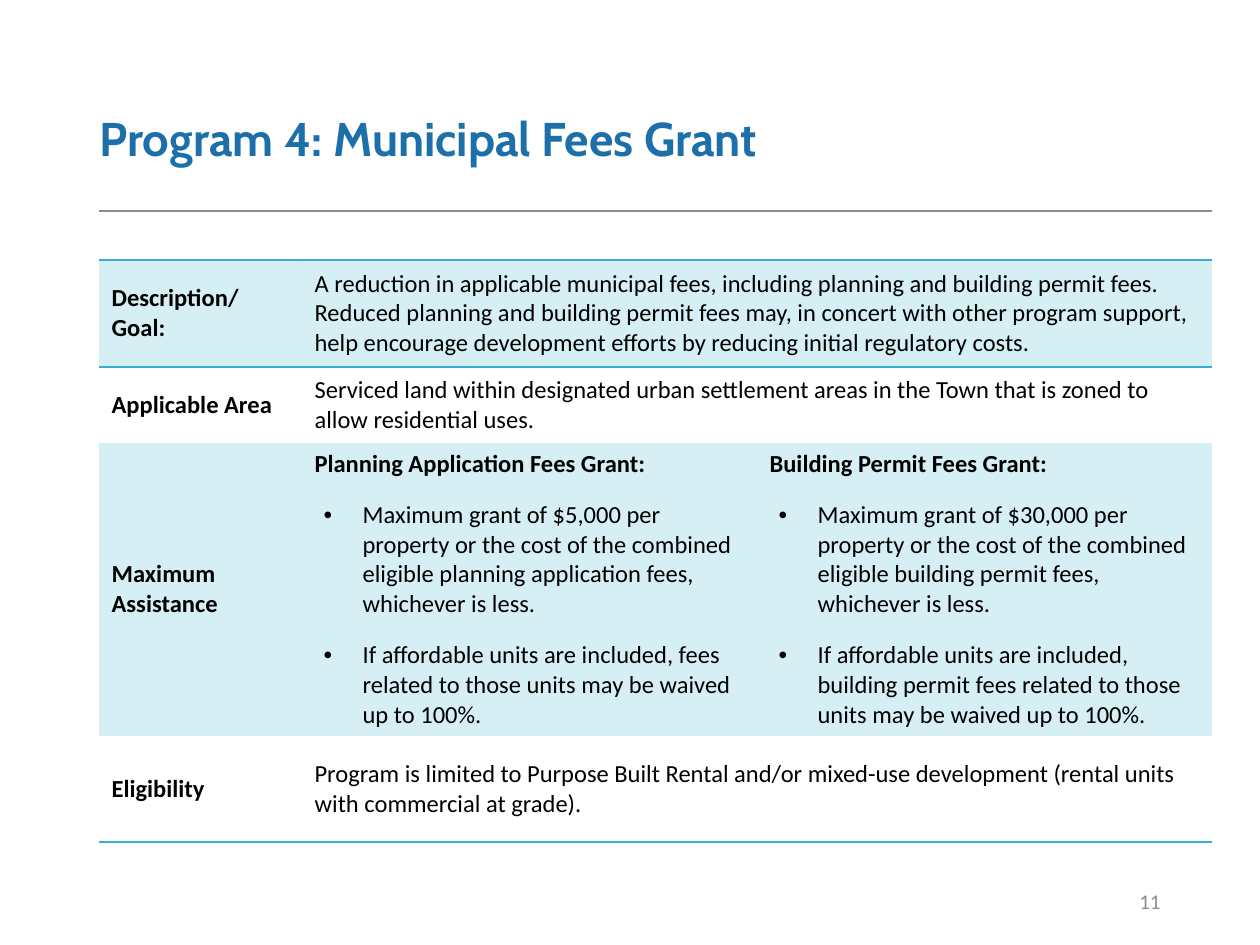
import pptx
import pptx.util
import pptx.dml.color
import pptx.enum.text
import pptx.oxml.ns
from lxml import etree

PX = 914400 // 126
TITLE_BLUE = pptx.dml.color.RGBColor(0x1D, 0x6F, 0xA9)
TEAL = pptx.dml.color.RGBColor(0x36, 0xAF, 0xCE)
RULE_GREY = pptx.dml.color.RGBColor(0x8C, 0x8C, 0x8C)
BLACK = pptx.dml.color.RGBColor(0, 0, 0)
NO_STYLE = "{2D5ABB26-0587-4C30-8999-92F81FD0307C}"
MIDDLE = pptx.enum.text.MSO_ANCHOR.MIDDLE
qn = pptx.oxml.ns.qn


def add_run(paragraph, text, size, color, bold=False, font="Calibri"):
    run = paragraph.add_run()
    run.text = text
    run.font.name = font
    run.font.size = pptx.util.Pt(size)
    run.font.bold = bold
    run.font.color.rgb = color


def add_border(cell, side, color, width):
    """Draw one side of a cell: lnT for top, lnB for bottom."""
    line = etree.SubElement(cell._tc.get_or_add_tcPr(), qn("a:" + side),
                            w=str(pptx.util.Pt(width)))
    fill = etree.SubElement(line, qn("a:solidFill"))
    etree.SubElement(fill, qn("a:srgbClr"), val=str(color))


prs = pptx.Presentation()
prs.slide_width = pptx.util.Inches(10)
prs.slide_height = pptx.util.Inches(7.5)
slide = prs.slides.add_slide(prs.slide_layouts[6])

# Title
title = slide.shapes.add_textbox(87 * PX, 50 * PX, 1086 * PX, 183 * PX).text_frame
title.word_wrap = True
title.vertical_anchor = MIDDLE
title.paragraphs[0].line_spacing = 0.9
add_run(title.paragraphs[0], "Program 4: Municipal Fees Grant", 27, TITLE_BLUE, True, "Cabin")

# Program table: a label, then one merged text or a list of (heading, bullets)
program = [
    ("Description/ Goal:",
     "A reduction in applicable municipal fees, including planning and building permit fees. "
     "Reduced planning and building permit fees may, in concert with other program support, "
     "help encourage development efforts by reducing initial regulatory costs."),
    ("Applicable Area",
     "Serviced land within designated urban settlement areas in the Town that is zoned to "
     "allow residential uses."),
    ("Maximum Assistance", [
        ("Planning Application Fees Grant:", [
            "Maximum grant of $5,000 per property or the cost of the combined eligible "
            "planning application fees, whichever is less.",
            "If affordable units are included, fees related to those units may be waived "
            "up to 100%."]),
        ("Building Permit Fees Grant:", [
            "Maximum grant of $30,000 per property or the cost of the combined eligible "
            "building permit fees, whichever is less.",
            "If affordable units are included, building permit fees related to those units "
            "may be waived up to 100%."])]),
    ("Eligibility",
     "Program is limited to Purpose Built Rental and/or mixed-use development (rental units "
     "with commercial at grade)."),
]
column_widths = [203, 455, 455]
row_heights = [49, 107, 76, 293, 106]

frame = slide.shapes.add_table(len(row_heights), len(column_widths), 99 * PX, 211 * PX,
                               sum(column_widths) * PX, sum(row_heights) * PX)
table = frame.table
table.first_row = False
table.horz_banding = False
table._tbl.tblPr.find(qn("a:tableStyleId")).text = NO_STYLE
for column, width in zip(table.columns, column_widths):
    column.width = width * PX
for row, height in zip(table.rows, row_heights):
    row.height = height * PX

last_row = len(row_heights) - 1
for column in range(len(column_widths)):
    add_border(table.cell(0, column), "lnT", RULE_GREY, 0.75)
    add_border(table.cell(0, column), "lnB", TEAL, 1)
    add_border(table.cell(1, column), "lnT", TEAL, 1)
    add_border(table.cell(last_row, column), "lnB", TEAL, 1)
    table.cell(0, column).text_frame.paragraphs[0].font.size = pptx.util.Pt(14)
table.cell(0, 1).merge(table.cell(0, 2))

for row, (label, content) in enumerate(program, start=1):
    label_cell = table.cell(row, 0)
    label_cell.vertical_anchor = MIDDLE
    add_run(label_cell.text_frame.paragraphs[0], label, 14, BLACK, True)

    if isinstance(content, str):
        detail = table.cell(row, 1)
        detail.merge(table.cell(row, 2))
        detail.vertical_anchor = MIDDLE
        add_run(detail.text_frame.paragraphs[0], content, 14, BLACK)
        continue

    for column, (heading, conditions) in enumerate(content, start=1):
        grant = table.cell(row, column).text_frame
        grant.paragraphs[0].space_after = pptx.util.Pt(12)
        add_run(grant.paragraphs[0], heading, 14, BLACK, True)
        for condition in conditions:
            item = grant.add_paragraph()
            item.level = 1
            item.space_after = pptx.util.Pt(12)
            properties = item._p.get_or_add_pPr()
            properties.set("marL", str(48 * PX))
            properties.set("indent", str(-39 * PX))
            etree.SubElement(properties, qn("a:buFont"), typeface="Arial")
            etree.SubElement(properties, qn("a:buChar"), char="•")
            add_run(item, condition, 14, BLACK)

for row in range(len(row_heights)):
    for column in range(len(column_widths)):
        cell = table.cell(row, column)
        if row % 2:
            cell.fill.solid()
            cell.fill.fore_color.rgb = TEAL
            tint = cell._tc.tcPr.find(qn("a:solidFill")).find(qn("a:srgbClr"))
            etree.SubElement(tint, qn("a:alpha"), val="20000")
        else:
            cell.fill.background()

# Page number
page = slide.shapes.add_textbox(890 * PX, 876 * PX, 283 * PX, 50 * PX).text_frame
page.word_wrap = True
page.vertical_anchor = MIDDLE
page.paragraphs[0].alignment = pptx.enum.text.PP_ALIGN.RIGHT
add_run(page.paragraphs[0], "11", 12, RULE_GREY)

prs.save("out.pptx")
